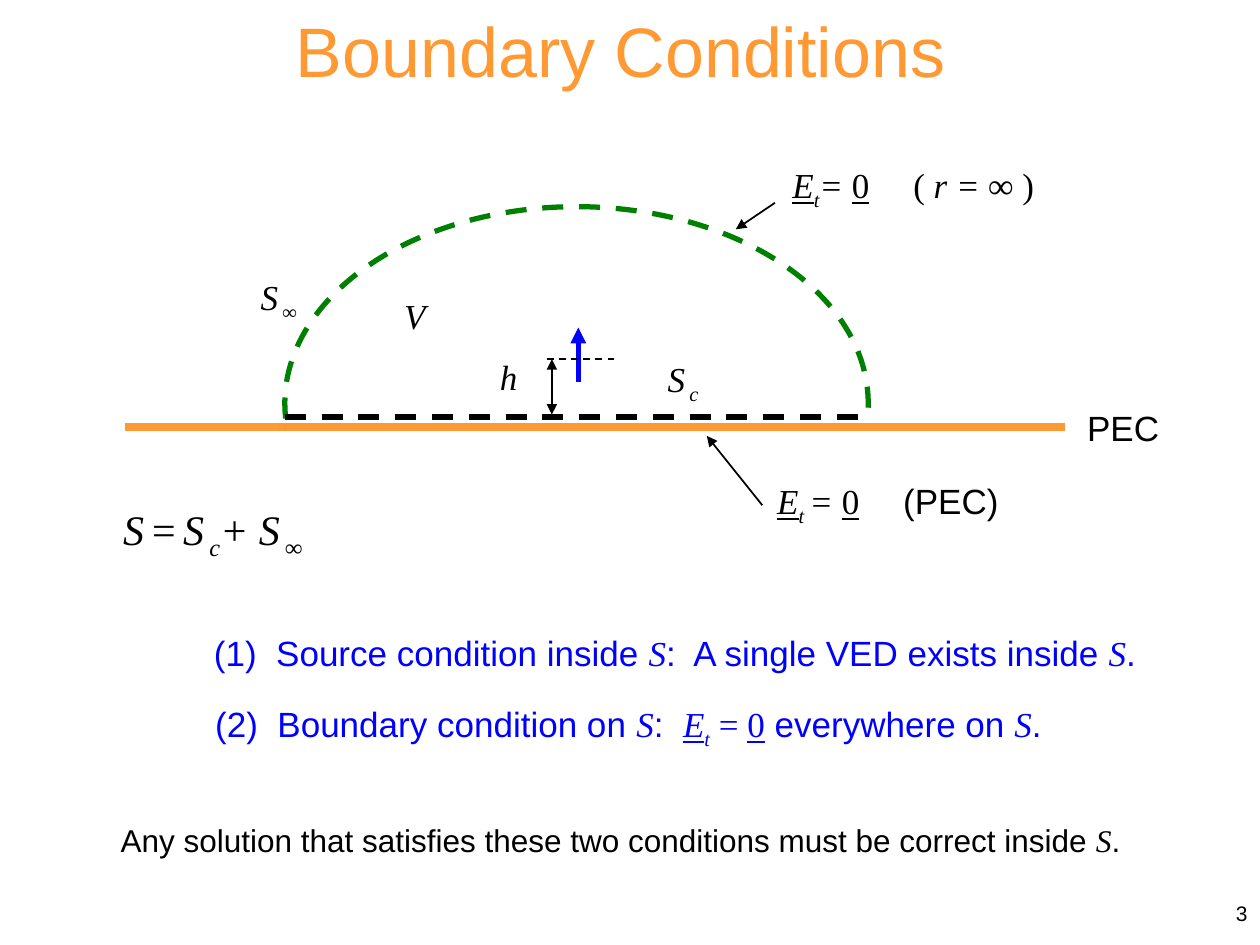
from math import cos, radians, sin

from lxml.etree import SubElement
from pptx import Presentation
from pptx.dml.color import RGBColor
from pptx.enum.dml import MSO_LINE
from pptx.enum.shapes import MSO_CONNECTOR
from pptx.enum.text import MSO_ANCHOR, MSO_AUTO_SIZE, PP_ALIGN
from pptx.oxml.ns import qn
from pptx.util import Inches, Pt

BLACK = RGBColor(0x00, 0x00, 0x00)
BLUE = RGBColor(0x00, 0x00, 0xFF)
GREEN = RGBColor(0x00, 0x80, 0x00)
ORANGE = RGBColor(0xFF, 0x99, 0x33)
COLUMNS, ROWS = 100, 75
CELL = Inches(0.1)
DEGREE = 60000
THIN_SPACE = (" ", "in")


def grid(*cells):
    """Turn grid cells into lengths."""
    return [round(c * CELL) for c in cells]


def write_runs(tf, runs, size=20, color=BLACK, align=PP_ALIGN.LEFT, tab=None):
    """Write (text, style) runs: t Times, i italic, u underlined, s subscript, n narrow."""
    p = tf.paragraphs[0]
    p.alignment = align
    if tab:
        tabs = SubElement(p._p.get_or_add_pPr(), qn("a:tabLst"))
        SubElement(tabs, qn("a:tab"), pos=str(grid(tab)[0]), algn="l")
    for text, style in runs:
        r = p.add_run()
        r.text = text
        r.font.name = "Times New Roman" if style else "Arial"
        r.font.size = Pt(size / 2 if "n" in style else size)
        r.font.color.rgb = color
        r.font.italic = "i" in style
        r.font.underline = "u" in style
        if "s" in style:
            r._r.get_or_add_rPr().set("baseline", "-25000")


def add_text(s, box, runs, wrap=False, anchor=MSO_ANCHOR.TOP, **fmt):
    """Add a text box at the grid box (column, row, width, height)."""
    tf = s.shapes.add_textbox(*grid(*box)).text_frame
    tf.word_wrap = wrap
    tf.auto_size = MSO_AUTO_SIZE.NONE if wrap else MSO_AUTO_SIZE.SHAPE_TO_FIT_TEXT
    tf.vertical_anchor = anchor
    write_runs(tf, runs, **fmt)


def add_title(s, box, text, **fmt):
    """Place the title placeholder and write its text."""
    sp = s.shapes.title
    sp.left, sp.top, sp.width, sp.height = grid(*box)
    sp.text_frame.vertical_anchor = MSO_ANCHOR.TOP
    write_runs(sp.text_frame, [(text, "")], align=PP_ALIGN.CENTER, **fmt)


def add_line(s, start, end, color=BLACK, width=1, dashed=False, arrows=()):
    """Draw a straight line, with arrows at headEnd (start) or tailEnd (end)."""
    sp = s.shapes.add_connector(MSO_CONNECTOR.STRAIGHT, *grid(*start, *end))
    sp.line.color.rgb = color
    sp.line.width = Pt(width)
    if dashed:
        sp.line.dash_style = MSO_LINE.DASH
    for arrow in arrows:
        SubElement(sp.line._get_or_add_ln(), qn(f"a:{arrow}"), type="triangle")
    SubElement(sp._element.spPr, qn("a:effectLst"))


def add_dome(s, center, radii, color, width, overhang=3):
    """Draw the dashed upper half of an ellipse, slightly past its ends, as one arc."""
    points = [
        grid(center[0] - radii[0] * cos(radians(a)), center[1] - radii[1] * sin(radians(a)))
        for a in (-overhang, 0, 90, 180, 180 + overhang)
    ]
    builder = s.shapes.build_freeform(*points[0])
    builder.add_line_segments(points[1:], close=False)
    sp = builder.convert_to_shape()
    outline = sp._element.find(".//" + qn("a:pathLst"))[0]
    for segment in outline.findall(qn("a:lnTo")):
        outline.remove(segment)
    rx, ry = grid(*radii)
    SubElement(outline, qn("a:arcTo"), wR=str(rx), hR=str(ry),
               stAng=str((180 - overhang) * DEGREE), swAng=str((180 + 2 * overhang) * DEGREE))
    sp.shadow.inherit = False
    sp.fill.background()
    sp.line.color.rgb = color
    sp.line.width = Pt(width)
    sp.line.dash_style = MSO_LINE.DASH


def add_diagram(s):
    """Draw the dipole above the conducting plane and the closed surface."""
    arrow = ("tailEnd",)
    add_line(s, (45.9, 30.3), (45.9, 26), BLUE, 3, arrows=arrow)
    add_dome(s, (45.8, 32.4), (23.15, 15.6), GREEN, 3)
    add_line(s, (61.5, 16.1), (58.4, 18.2), arrows=arrow)
    add_line(s, (60.5, 40.1), (56.1, 34.6), arrows=arrow)
    add_line(s, (9.9, 33.9), (84.5, 33.9), ORANGE, 4.5)
    add_line(s, (22.6, 33.1), (68.7, 33.1), width=3, dashed=True)
    add_line(s, (43.4, 28.5), (48.7, 28.5), dashed=True)
    add_line(s, (43.8, 28.5), (43.8, 32.9), arrows=("headEnd", "tailEnd"))


def add_labels(s):
    """Label the regions, surfaces and boundary values."""
    add_text(s, (85.3, 31.8, 7.7, 4.3), [("PEC", "")])
    add_text(s, (61.9, 12.5, 21.2, 4.3),
             [("E", "iu"), ("t", "is"), ("= ", "i"), ("0", "tu"), ("\t", "i"),
              ("( ", "t"), ("r = ∞ ", "i"), (")", "t")], tab=9.6)
    add_text(s, (60.7, 37.6, 19.7, 4.3),
             [("E", "iu"), ("t ", "is"), ("= ", "i"), ("0", "tu"), ("\t", "t"),
              ("(PEC)", "")], tab=10)
    add_text(s, (19.7, 21.4, 5.6, 4.3), [("S", "i"), THIN_SPACE, ("∞", "is")])
    add_text(s, (52, 27.9, 4.7, 4.3), [("S", "i"), THIN_SPACE, ("c", "is")])
    add_text(s, (31.1, 22.9, 4.4, 4.3), [("V", "i")])
    add_text(s, (38.7, 27.7, 3.4, 4.3), [("h", "i")])
    add_text(s, (8.8, 39.5, 17.7, 5),
             [("S", "i"), THIN_SPACE, ("=", "i"), THIN_SPACE, ("S", "i"), THIN_SPACE,
              ("c", "is"), ("+ S", "i"), THIN_SPACE, ("∞", "is")], size=24)


def add_conditions(s):
    """State the two conditions and the conclusion."""
    add_text(s, (16, 49.6, 75.7, 4.4),
             [("(1)  Source condition inside ", ""), ("S", "i"),
              (":  A single VED exists inside ", ""), ("S", "i"), (".", "")], color=BLUE)
    add_text(s, (16.1, 55.3, 69, 4.4),
             [("(2)  Boundary condition on ", ""), ("S", "i"), (":  ", ""), ("E", "iu"),
              ("t", "is"), (" = ", "t"), ("0", "tu"), (" everywhere on ", ""),
              ("S", "i"), (".", "")], color=BLUE)
    add_text(s, (8.2, 64.7, 82.8, 4),
             [("Any solution that satisfies these two conditions must be correct inside ", ""),
              ("S", "i"), (". ", "")], size=18, align=PP_ALIGN.CENTER)


def main():
    """Build the slide and save it."""
    prs = Presentation()
    prs.slide_width, prs.slide_height = grid(COLUMNS, ROWS)
    s = prs.slides.add_slide(prs.slide_layouts[5])
    add_title(s, (2, 0.1, 94.5, 7.7), "Boundary Conditions", size=40, color=ORANGE)
    add_diagram(s)
    add_labels(s)
    add_conditions(s)
    add_text(s, (79.2, 70, 20.8, 5), [("3", "")], wrap=True, anchor=MSO_ANCHOR.MIDDLE,
             size=12, align=PP_ALIGN.RIGHT)
    prs.save("out.pptx")


if __name__ == "__main__":
    main()
